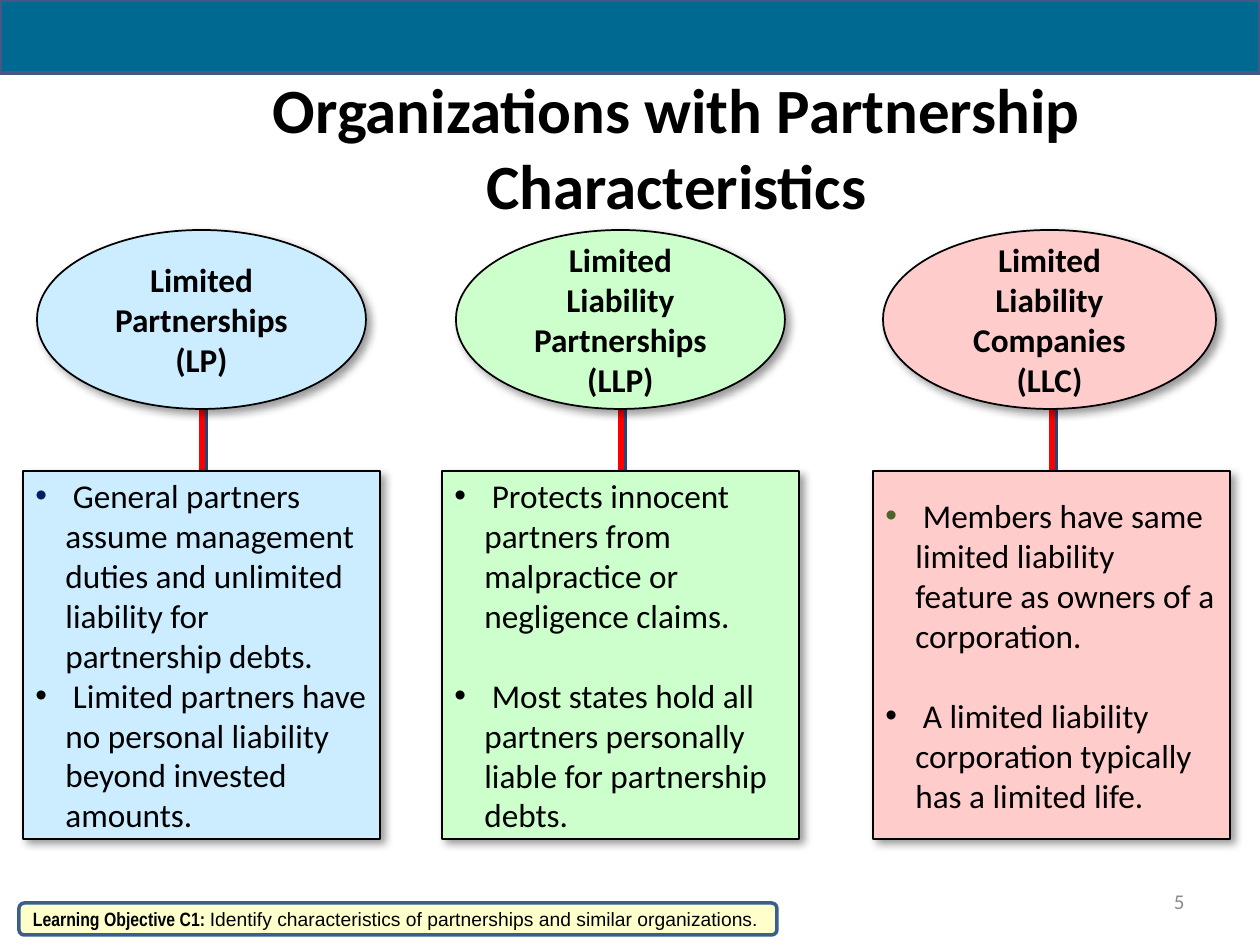
import pptx
import pptx.util
import pptx.dml.color
import pptx.enum.shapes
import pptx.enum.text
import pptx.oxml
import pptx.oxml.ns

PX = 7257.14  # EMU per px, 126 px to the inch
SHAPE = pptx.enum.shapes.MSO_SHAPE
ALIGN = pptx.enum.text.PP_ALIGN
COLORS = {
    "black": "000000", "banner": "006991", "banner_edge": "475785",
    "blue": "CCECFF", "green": "CCFFCC", "pink": "FFCCCC",
    "stem": "FF0000", "stem_shadow": "1F497D",
    "navy": "002060", "olive": "4F6228", "number": "8C8C8C",
    "note": "FFFFCC", "note_edge": "3A5F8C",
}
OVAL_TOP, OVAL_HEIGHT = 230, 179
BOX_TOP, BOX_WIDTH, BOX_HEIGHT = 471, 357, 368
STEM_TOP, STEM_BOTTOM = 388, 493
BULLET_INDENT = 30

# heading, fill, box left, oval left, oval width, stem x, stem shadow (pt, degrees),
# first bullet colour, gap between points (pt), points
ORGANIZATIONS = [
    ("Limited Partnerships\v(LP)", "blue", 23, 37, 329, 202, (2.8, 45), "navy", 0,
     (" General partners assume management duties and unlimited liability for partnership debts.",
      " Limited partners have no personal liability beyond invested amounts.")),
    ("Limited Liability Partnerships\v(LLP)", "green", 442, 456, 329, 621, (2.8, 45), "black", 23,
     (" Protects innocent partners from malpractice or negligence claims.",
      " Most states hold all partners personally liable for partnership debts.")),
    ("Limited Liability Companies\v(LLC)", "pink", 873, 883, 333, 1052, (2, 0), "olive", 23,
     (" Members have same limited liability feature as owners of a corporation.",
      " A limited liability corporation typically has a limited life.")),
]


def px(length):
    return pptx.util.Emu(round(length * PX))


def rgb(name):
    return pptx.dml.color.RGBColor.from_string(COLORS[name])


def style_font(font, size, color="black", bold=False, face="Calibri"):
    font.name, font.size, font.bold = face, pptx.util.Pt(size), bold
    font.color.rgb = rgb(color)


def add_shadow(element, color, opacity, blur, distance, angle):
    """Add an outer shadow; blur and distance in points, opacity in percent."""
    for old in element.spPr.findall(pptx.oxml.ns.qn("a:effectLst")):
        element.spPr.remove(old)
    element.spPr.append(pptx.oxml.parse_xml(
        f'<a:effectLst {pptx.oxml.ns.nsdecls("a")}>'
        f'<a:outerShdw blurRad="{pptx.util.Pt(blur)}" dist="{pptx.util.Pt(distance)}" '
        f'dir="{angle * 60000}" algn="tl" rotWithShape="0">'
        f'<a:srgbClr val="{COLORS[color]}"><a:alpha val="{opacity * 1000}"/></a:srgbClr>'
        '</a:outerShdw></a:effectLst>'))


def add_panel(shapes, kind, bounds, fill, edge, edge_width):
    panel = shapes.add_shape(kind, *map(px, bounds))
    panel.shadow.inherit = False
    panel.fill.solid()
    panel.fill.fore_color.rgb = rgb(fill)
    panel.line.color.rgb = rgb(edge)
    panel.line.width = pptx.util.Pt(edge_width)
    panel.text_frame.word_wrap = True
    panel.text_frame.vertical_anchor = pptx.enum.text.MSO_ANCHOR.MIDDLE
    return panel


def add_label(shapes, bounds, text, align, size, color="black", bold=False):
    frame = shapes.add_textbox(*map(px, bounds)).text_frame
    frame.word_wrap = True
    frame.vertical_anchor = pptx.enum.text.MSO_ANCHOR.MIDDLE
    frame.text = text
    frame.paragraphs[0].alignment = align
    style_font(frame.paragraphs[0].runs[0].font, size, color, bold)


def add_bullet(paragraph, color):
    properties = paragraph._p.get_or_add_pPr()
    properties.set("marL", str(px(BULLET_INDENT)))
    properties.set("indent", str(-px(BULLET_INDENT)))
    namespace = pptx.oxml.ns.nsdecls("a")
    for xml in (f'<a:buClr {namespace}><a:srgbClr val="{COLORS[color]}"/></a:buClr>',
                f'<a:buFont {namespace} typeface="Arial"/>',
                f'<a:buChar {namespace} char="•"/>'):
        properties.append(pptx.oxml.parse_xml(xml))


def add_stem(shapes, x, shadow):
    stem = shapes.add_connector(pptx.enum.shapes.MSO_CONNECTOR.STRAIGHT,
                                px(x), px(STEM_TOP), px(x), px(STEM_BOTTOM))
    stem.line.color.rgb = rgb("stem")
    stem.line.width = pptx.util.Pt(3)
    add_shadow(stem._element, "stem_shadow", 100, 0, *shadow)


def add_heading(shapes, bounds, text, fill):
    oval = add_panel(shapes, SHAPE.OVAL, bounds, fill, "black", 1)
    add_shadow(oval._element, "black", 40, 5, 3, 45)
    oval.text_frame.text = text
    paragraph = oval.text_frame.paragraphs[0]
    paragraph.alignment = ALIGN.CENTER
    for run in paragraph.runs:
        style_font(run.font, 19, bold=True)


def add_points(shapes, bounds, points, fill, first_bullet, gap):
    box = add_panel(shapes, SHAPE.RECTANGLE, bounds, fill, "black", 0.75)
    add_shadow(box._element, "black", 40, 5, 3, 45)
    box.text_frame.text = "\n".join(points)
    bullets = (first_bullet, "black")
    for paragraph, bullet in zip(box.text_frame.paragraphs, bullets):
        paragraph.alignment = ALIGN.LEFT
        style_font(paragraph.runs[0].font, 19)
        add_bullet(paragraph, bullet)
    box.text_frame.paragraphs[0].space_after = pptx.util.Pt(gap)


def add_organization(slide, heading, fill, box_left, oval_left, oval_width,
                     stem_x, stem_shadow, first_bullet, gap, points):
    shapes = slide.shapes.add_group_shape().shapes
    add_stem(shapes, stem_x, stem_shadow)
    add_heading(shapes, (oval_left, OVAL_TOP, oval_width, OVAL_HEIGHT), heading, fill)
    add_points(shapes, (box_left, BOX_TOP, BOX_WIDTH, BOX_HEIGHT),
               points, fill, first_bullet, gap)


def add_objective(shapes):
    note = add_panel(shapes, SHAPE.ROUNDED_RECTANGLE, (19, 903, 758, 32),
                     "note", "note_edge", 2)
    frame = note.text_frame
    frame.margin_right = frame.margin_top = frame.margin_bottom = 0
    paragraph = frame.paragraphs[0]
    paragraph.alignment = ALIGN.LEFT
    for text, face, bold in (
            ("Learning Objective C1: ", "Arial Narrow", True),
            ("Identify characteristics of partnerships and similar organizations.",
             "Arial", False)):
        run = paragraph.add_run()
        run.text = text
        style_font(run.font, 11, bold=bold, face=face)


def main():
    deck = pptx.Presentation()
    deck.slide_width, deck.slide_height = px(1260), px(945)
    slide = deck.slides.add_slide(deck.slide_layouts[6])
    add_label(slide.shapes, (136, 73, 1081, 147),
              "Organizations with Partnership Characteristics", ALIGN.CENTER, 36, bold=True)
    for organization in ORGANIZATIONS:
        add_organization(slide, *organization)
    add_panel(slide.shapes, SHAPE.RECTANGLE, (0, 0, 1260, 73), "banner", "banner_edge", 2.25)
    add_label(slide.shapes, (903, 876, 294, 50), "5", ALIGN.RIGHT, 12, "number")
    add_objective(slide.shapes)
    deck.save("out.pptx")


if __name__ == "__main__":
    main()
